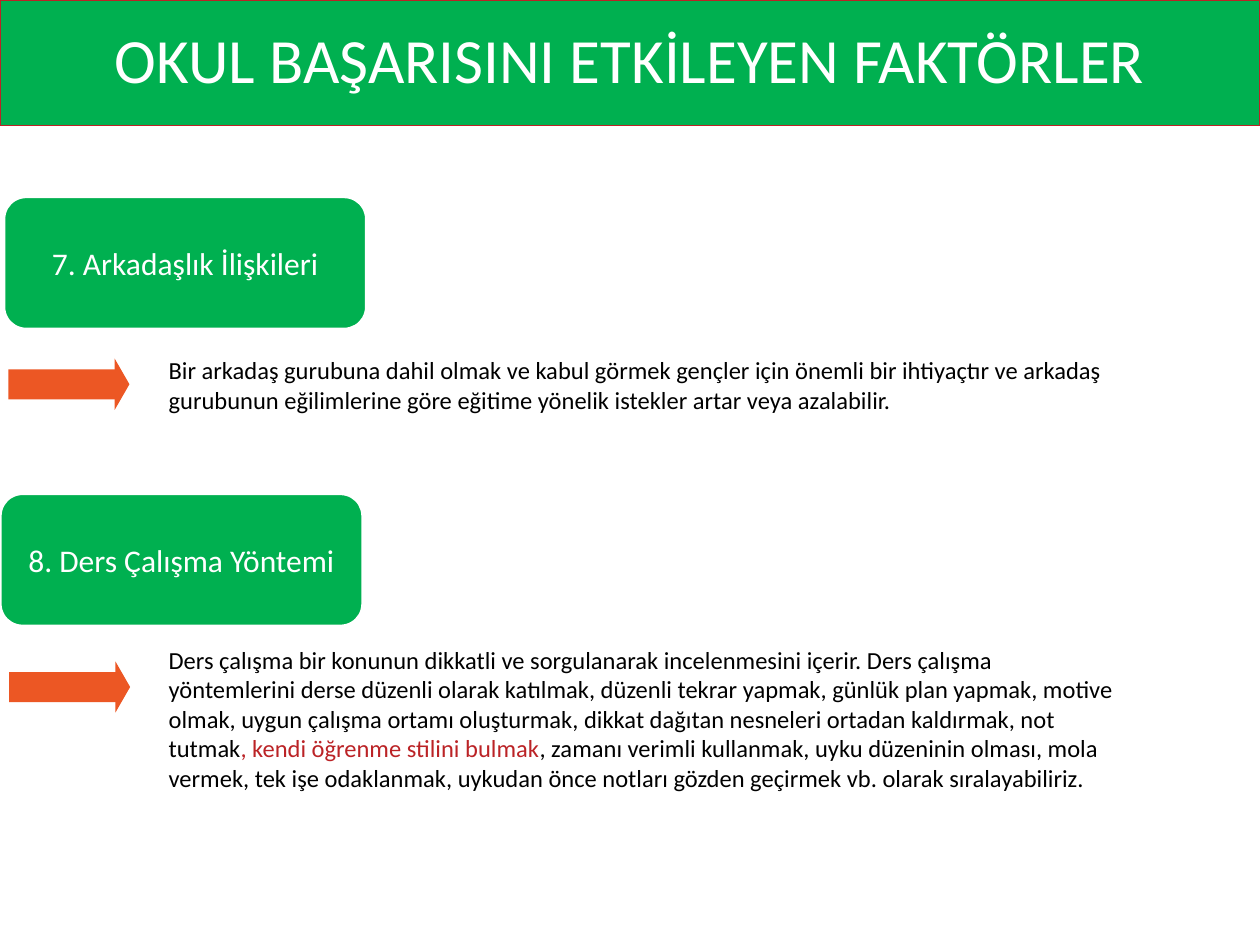
from pptx import Presentation
from pptx.dml.color import RGBColor
from pptx.enum import shapes, text
from pptx.util import Pt

GREEN, ORANGE, RED = "00B050", "EC5724", "BB2326"
WHITE, BLACK = "FFFFFF", "000000"
FONT = "Calibri"

FRIENDSHIP = [
    ("Bir arkadaş gurubuna dahil olmak ve kabul görmek gençler için önemli bir "
     "ihtiyaçtır ve arkadaş gurubunun eğilimlerine göre eğitime yönelik istekler "
     "artar veya azalabilir.", BLACK),
]
STUDY_METHOD = [
    ("Ders çalışma bir konunun dikkatli ve sorgulanarak incelenmesini içerir. Ders "
     "çalışma yöntemlerini derse düzenli olarak katılmak, düzenli tekrar yapmak, "
     "günlük plan yapmak, motive olmak, uygun çalışma ortamı oluşturmak, dikkat "
     "dağıtan nesneleri ortadan kaldırmak, not tutmak", BLACK),
    (", kendi öğrenme stilini bulmak", RED),
    (", zamanı verimli kullanmak, uyku düzeninin olması, mola vermek, tek işe "
     "odaklanmak, uykudan önce notları gözden geçirmek vb. olarak sıralayabiliriz.",
     BLACK),
]


def color(value):
    return RGBColor.from_string(value)


def paint(shape, fill, line=None, line_width=0):
    shape.shadow.inherit = False
    shape.fill.solid()
    shape.fill.fore_color.rgb = color(fill)
    if line:
        shape.line.color.rgb = color(line)
        shape.line.width = Pt(line_width)
    else:
        shape.line.fill.background()


def add_label(slide, kind, box, label, size, line, line_width):
    """Add a green shape with centred white text and return its paragraph."""
    shape = slide.shapes.add_shape(kind, *map(Pt, box))
    paint(shape, GREEN, line, line_width)
    frame = shape.text_frame
    frame.word_wrap = True
    frame.vertical_anchor = text.MSO_ANCHOR.MIDDLE
    paragraph = frame.paragraphs[0]
    paragraph.text = label
    paragraph.alignment = text.PP_ALIGN.CENTER
    paragraph.font.name = FONT
    paragraph.font.size = Pt(size)
    paragraph.font.color.rgb = color(WHITE)
    return paragraph


def add_title(slide, box):
    paragraph = add_label(slide, shapes.MSO_SHAPE.RECTANGLE, box,
                          "OKUL BAŞARISINI ETKİLEYEN FAKTÖRLER", 36, RED, 0.5)
    paragraph.line_spacing = 0.9


def add_arrow(slide, box):
    """Group a shaft and a triangular head into an arrow that fills the box."""
    left, top, width, height = box
    head_width, shaft_height = 8.4, 17.2
    head_left = left + width - head_width
    middle = top + height / 2
    group = slide.shapes.add_group_shape()
    shaft = group.shapes.add_shape(
        shapes.MSO_SHAPE.RECTANGLE, Pt(left), Pt(middle - shaft_height / 2),
        Pt(head_left - left + 2), Pt(shaft_height))
    builder = group.shapes.build_freeform(Pt(head_left), Pt(top))
    builder.add_line_segments(
        [(Pt(left + width), Pt(middle)), (Pt(head_left), Pt(top + height))], close=True)
    for part in (shaft, builder.convert_to_shape()):
        paint(part, ORANGE)


def add_body(slide, box, runs):
    frame = slide.shapes.add_textbox(*map(Pt, box)).text_frame
    frame.word_wrap = True
    frame.auto_size = text.MSO_AUTO_SIZE.SHAPE_TO_FIT_TEXT
    paragraph = frame.paragraphs[0]
    paragraph.font.name = FONT
    paragraph.font.size = Pt(14)
    for words, run_color in runs:
        run = paragraph.add_run()
        run.text = words
        run.font.color.rgb = color(run_color)


def add_factor(slide, heading, heading_box, arrow_box, body_box, runs):
    add_label(slide, shapes.MSO_SHAPE.ROUNDED_RECTANGLE, heading_box, heading, 18,
              WHITE, 1.5)
    add_arrow(slide, arrow_box)
    add_body(slide, body_box, runs)


def main():
    presentation = Presentation()
    presentation.slide_width, presentation.slide_height = Pt(720), Pt(540)
    slide = presentation.slides.add_slide(presentation.slide_layouts[6])
    add_title(slide, (0, 0, 720, 72))
    add_factor(slide, "7. Arkadaşlık İlişkileri", (2.3, 112.5, 207, 75.5),
               (4.8, 205, 69.2, 29.2), (89.3, 199.4, 607, 41.2), FRIENDSHIP)
    add_factor(slide, "8. Ders Çalışma Yöntemi", (0.2, 282.2, 207, 75.5),
               (5.2, 378, 69.2, 29.2), (89.3, 365, 556.6, 92), STUDY_METHOD)
    presentation.save("out.pptx")


if __name__ == "__main__":
    main()
